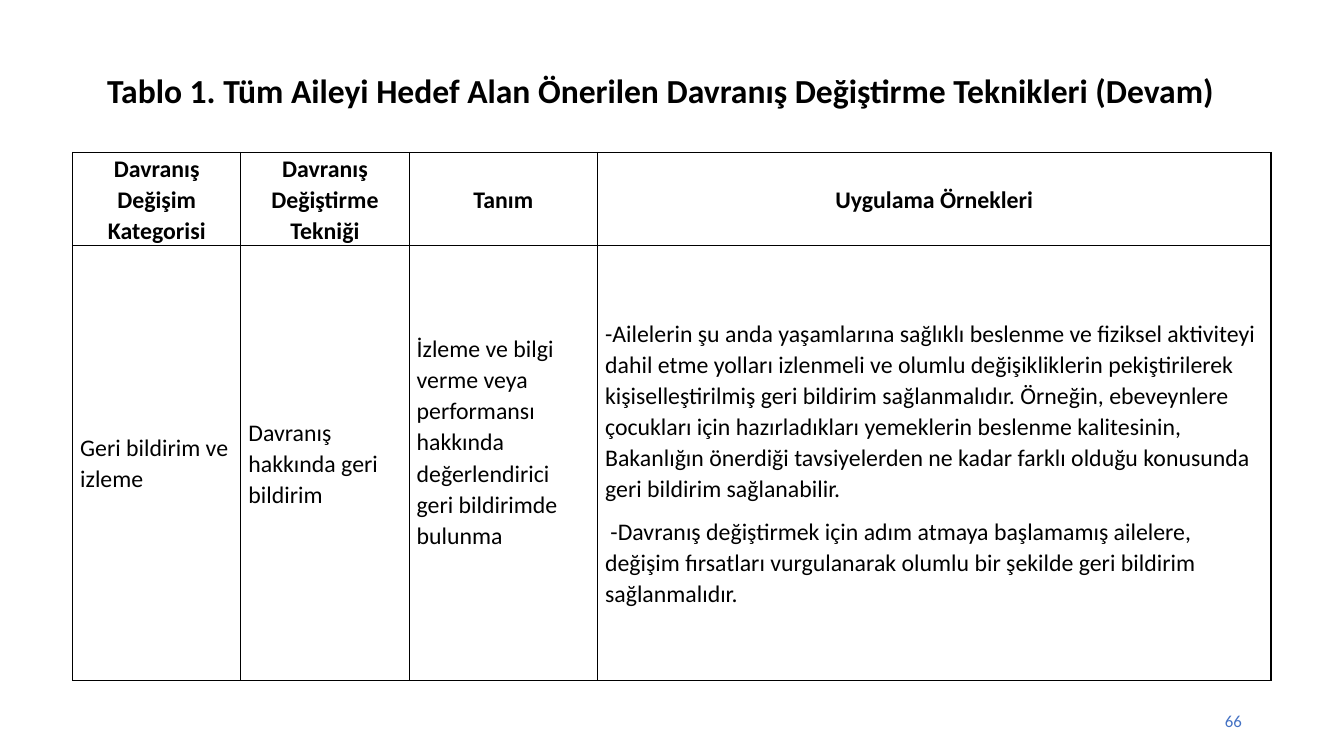
from lxml.etree import SubElement
from pptx import Presentation
from pptx.dml.color import RGBColor
from pptx.enum.text import MSO_ANCHOR, MSO_AUTO_SIZE, PP_ALIGN
from pptx.oxml.ns import qn
from pptx.util import Cm, Pt

BLACK, WHITE, BLUE = "000000", "FFFFFF", "4472C4"

TITLE = "Tablo 1. Tüm Aileyi Hedef Alan Önerilen Davranış Değiştirme Teknikleri (Devam)"
HEADERS = [
    "Davranış Değişim Kategorisi",
    "Davranış Değiştirme Tekniği",
    "Tanım",
    "Uygulama Örnekleri",
]
TECHNIQUE = [
    "Geri bildirim ve izleme",
    "Davranış hakkında geri bildirim",
    "İzleme ve bilgi verme veya performansı hakkında değerlendirici "
    "geri bildirimde bulunma",
    "-Ailelerin şu anda yaşamlarına sağlıklı beslenme ve fiziksel aktiviteyi "
    "dahil etme yolları izlenmeli ve olumlu değişikliklerin pekiştirilerek "
    "kişiselleştirilmiş geri bildirim sağlanmalıdır. Örneğin, ebeveynlere "
    "çocukları için hazırladıkları yemeklerin beslenme kalitesinin, "
    "Bakanlığın önerdiği tavsiyelerden ne kadar farklı olduğu konusunda "
    "geri bildirim sağlanabilir.\n"
    " -Davranış değiştirmek için adım atmaya başlamamış ailelere, değişim "
    "fırsatları vurgulanarak olumlu bir şekilde geri bildirim sağlanmalıdır.",
]
COLUMN_WIDTHS = [4.24, 4.24, 4.75, 16.97]
ROW_HEIGHTS = [2.34, 10.95]


def color(value):
    return RGBColor.from_string(value)


class SlideBuilder:
    font_name = "Calibri"

    def __init__(self, presentation):
        self.slide = presentation.slides.add_slide(presentation.slide_layouts[5])

    def format_text(self, text_frame, size, fill=BLACK, bold=False,
                    align=PP_ALIGN.LEFT, line_spacing=1.0, space_after=0):
        for paragraph in text_frame.paragraphs:
            paragraph.alignment = align
            paragraph.line_spacing = line_spacing
            paragraph.space_after = Pt(space_after)
            for run in paragraph.runs:
                run.font.name = self.font_name
                run.font.size = Pt(size)
                run.font.bold = bold
                run.font.color.rgb = color(fill)

    def add_title(self, text, left, top, width, height):
        title = self.slide.shapes.title
        title.left, title.top, title.width, title.height = map(Cm, (left, top, width, height))
        title.text_frame.text = text
        title.text_frame.auto_size = MSO_AUTO_SIZE.NONE
        title.text_frame.vertical_anchor = MSO_ANCHOR.MIDDLE
        self.format_text(title.text_frame, 24, bold=True,
                         align=PP_ALIGN.CENTER, line_spacing=0.9)

    def add_text(self, text, left, top, width, height, size, fill, align):
        box = self.slide.shapes.add_textbox(*map(Cm, (left, top, width, height)))
        box.text_frame.word_wrap = True
        box.text_frame.vertical_anchor = MSO_ANCHOR.MIDDLE
        box.text_frame.text = text
        self.format_text(box.text_frame, size, fill, align=align)

    def add_table(self, rows, left, top, widths, heights):
        frame = self.slide.shapes.add_table(
            len(rows), len(widths), Cm(left), Cm(top), Cm(sum(widths)), Cm(sum(heights)))
        table = frame.table
        for column, width in zip(table.columns, widths):
            column.width = Cm(width)
        for row, height in zip(table.rows, heights):
            row.height = Cm(height)
        for row_index, texts in enumerate(rows):
            for column_index, text in enumerate(texts):
                self.fill_cell(table.cell(row_index, column_index), text, row_index == 0)
        return table

    def fill_cell(self, cell, text, is_header):
        cell.text_frame.text = text
        cell.vertical_anchor = MSO_ANCHOR.MIDDLE
        cell.margin_left = cell.margin_right = Cm(0.19)
        cell.margin_top = cell.margin_bottom = 0
        self.format_text(
            cell.text_frame, 17, bold=is_header, line_spacing=1.07,
            align=PP_ALIGN.CENTER if is_header else PP_ALIGN.LEFT,
            space_after=0 if is_header else 8)
        self.add_borders(cell)
        cell.fill.solid()
        cell.fill.fore_color.rgb = color(WHITE)

    def add_borders(self, cell):
        properties = cell._tc.get_or_add_tcPr()
        for side in ("a:lnL", "a:lnR", "a:lnT", "a:lnB"):
            line = SubElement(properties, qn(side), w=str(Pt(1)))
            fill = SubElement(line, qn("a:solidFill"))
            SubElement(fill, qn("a:srgbClr"), val=BLACK)


def main():
    presentation = Presentation()
    presentation.slide_width, presentation.slide_height = Cm(33.87), Cm(19.05)
    builder = SlideBuilder(presentation)

    # Title
    builder.add_title(TITLE, 1.55, 1.22, 30.2, 2.21)

    # Table of techniques; the definition sits a little above the middle
    table = builder.add_table([HEADERS, TECHNIQUE], 1.83, 3.84, COLUMN_WIDTHS, ROW_HEIGHTS)
    table.cell(1, 2).margin_bottom = Cm(1.07)

    # Slide number
    builder.add_text("66", 23.93, 17.65, 7.62, 1.02, 12, BLUE, PP_ALIGN.RIGHT)

    presentation.save("out.pptx")


if __name__ == "__main__":
    main()
